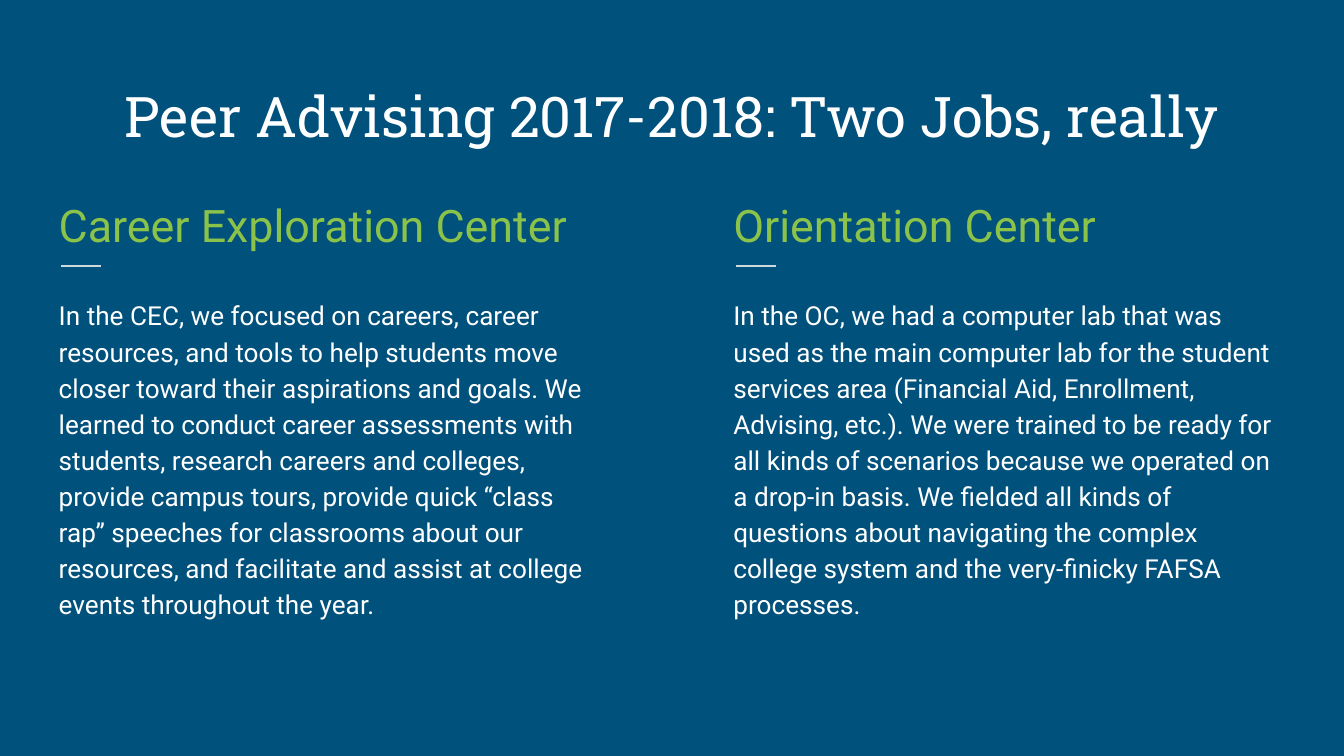
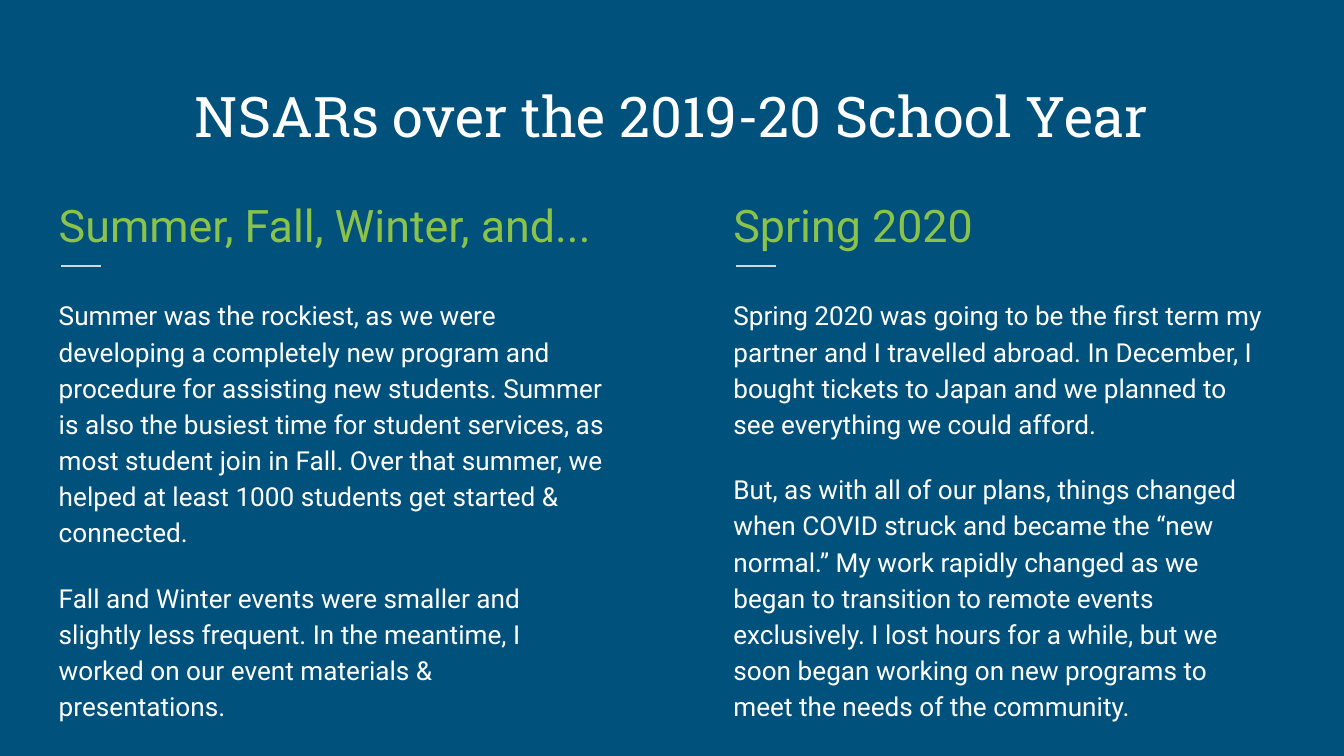
from dataclasses import dataclass

from lxml.etree import SubElement
from pptx import Presentation
from pptx.dml.color import RGBColor
from pptx.enum.shapes import MSO_CONNECTOR
from pptx.enum.text import MSO_ANCHOR, MSO_AUTO_SIZE, PP_ALIGN
from pptx.oxml.ns import qn
from pptx.util import Cm, Pt


@dataclass(frozen=True)
class Theme:
    background: str = "00517C"
    white: str = "FFFFFF"
    green: str = "8BC34A"
    rule: str = "CFD8DC"
    title_font: str = "Roboto Slab"
    body_font: str = "Roboto"
    title_size: int = 30
    heading_size: int = 24
    body_size: int = 14
    line_spacing: float = 1.15
    gap: int = 16


COMPARISON_LAYOUT = 4
COLUMN_LEFTS = (0.86, 13.61)
COLUMN_WIDTH = 10.69
WIDE_COLUMN = 10.82

SLIDES = [
    ("Peer Advising 2017-2018: Two Jobs, really", [
        ("Career Exploration Center", COLUMN_WIDTH, [
            "In the CEC, we focused on careers, career resources, and tools to help "
            "students move closer toward their aspirations and goals. We learned to "
            "conduct career assessments with students, research careers and colleges, "
            "provide campus tours, provide quick “class rap” speeches for classrooms "
            "about our resources, and facilitate and assist at college events "
            "throughout the year."]),
        ("Orientation Center", COLUMN_WIDTH, [
            "In the OC, we had a computer lab that was used as the main computer lab "
            "for the student services area (Financial Aid, Enrollment, Advising, etc.). "
            "We were trained to be ready for all kinds of scenarios because we operated "
            "on a drop-in basis. We fielded all kinds of questions about navigating the "
            "complex college system and the very-finicky FAFSA processes."]),
    ]),
    ("NSARs over the 2019-20 School Year", [
        ("Summer, Fall, Winter, and...", WIDE_COLUMN, [
            "Summer was the rockiest, as we were developing a completely new program "
            "and procedure for assisting new students. Summer is also the busiest time "
            "for student services, as most student join in Fall. Over that summer, we "
            "helped at least 1000 students get started & connected.",
            "Fall and Winter events were smaller and slightly less frequent. In the "
            "meantime, I worked on our event materials & presentations."]),
        ("Spring 2020", COLUMN_WIDTH, [
            "Spring 2020 was going to be the first term my partner and I travelled "
            "abroad. In December, I bought tickets to Japan and we planned to see "
            "everything we could afford.",
            "But, as with all of our plans, things changed when COVID struck and became "
            "the “new normal.” My work rapidly changed as we began to transition to "
            "remote events exclusively. I lost hours for a while, but we soon began "
            "working on new programs to meet the needs of the community."]),
    ]),
]


class Deck:
    def __init__(self, theme):
        self.theme = theme
        self.prs = Presentation()
        self.prs.slide_width, self.prs.slide_height = Cm(25.4), Cm(14.29)
        fill = self.prs.slide_master.background.fill
        fill.solid()
        fill.fore_color.rgb = RGBColor.from_string(theme.background)
        self.s = None

    def new_slide(self):
        layout = self.prs.slide_layouts[COMPARISON_LAYOUT]
        self.s = self.prs.slides.add_slide(layout)

    def place(self, idx, box, texts, anchor):
        """Move a placeholder to box, write one paragraph per text, return its paragraphs."""
        sp = self.s.placeholders[idx]
        sp.left, sp.top, sp.width, sp.height = map(Cm, box)
        tf = sp.text_frame
        tf.text = "\n".join(texts)
        tf.word_wrap = True
        tf.auto_size = MSO_AUTO_SIZE.NONE
        tf.vertical_anchor = anchor
        tf.margin_left = tf.margin_right = tf.margin_top = tf.margin_bottom = Cm(0.25)
        return tf.paragraphs

    def style(self, p, font, size, color):
        for r in p.runs:
            r.font.name, r.font.size, r.font.bold = font, Pt(size), False
            r.font.color.rgb = RGBColor.from_string(color)

    def title(self, text):
        t = self.theme
        p = self.place(0, (0.86, 1.04, 23.67, 2.03), [text], MSO_ANCHOR.BOTTOM)[0]
        p.alignment = PP_ALIGN.CENTER
        self.style(p, t.title_font, t.title_size, t.white)

    def prose(self, idx, box, texts, size, color):
        """Fill a body placeholder with unbulleted, evenly spaced paragraphs."""
        t = self.theme
        paragraphs = self.place(idx, box, texts, MSO_ANCHOR.TOP)
        for i, p in enumerate(paragraphs):
            p.alignment = PP_ALIGN.LEFT
            p.line_spacing = t.line_spacing
            p.space_before = Pt(t.gap if i else 0)
            p.space_after = Pt(t.gap if i == len(paragraphs) - 1 else 0)
            pPr = p._p.get_or_add_pPr()
            pPr.set("marL", "0")
            pPr.set("indent", "0")
            SubElement(pPr, qn("a:buNone"))
            self.style(p, t.body_font, size, color)

    def rule(self, left, top, length):
        line = self.s.shapes.add_connector(
            MSO_CONNECTOR.STRAIGHT, Cm(left), Cm(top), Cm(left + length), Cm(top))
        line.line.color.rgb = RGBColor.from_string(self.theme.rule)
        line.line.width = Pt(0.75)
        SubElement(line._element.spPr, qn("a:effectLst"))

    def column(self, number, heading, width, texts):
        t = self.theme
        left = COLUMN_LEFTS[number]
        idx = 1 + 2 * number
        self.prose(idx, (left, 3.33, COLUMN_WIDTH, 1.45), [heading],
                   t.heading_size, t.green)
        self.rule(left + 0.3, 5.03, 0.75)
        self.prose(idx + 1, (left, 5.33, width, 7.65), texts, t.body_size, t.white)


def main():
    deck = Deck(Theme())
    for title, columns in SLIDES:
        deck.new_slide()
        deck.title(title)
        for number, (heading, width, texts) in enumerate(columns):
            deck.column(number, heading, width, texts)
    deck.prs.save("out.pptx")


if __name__ == "__main__":
    main()
